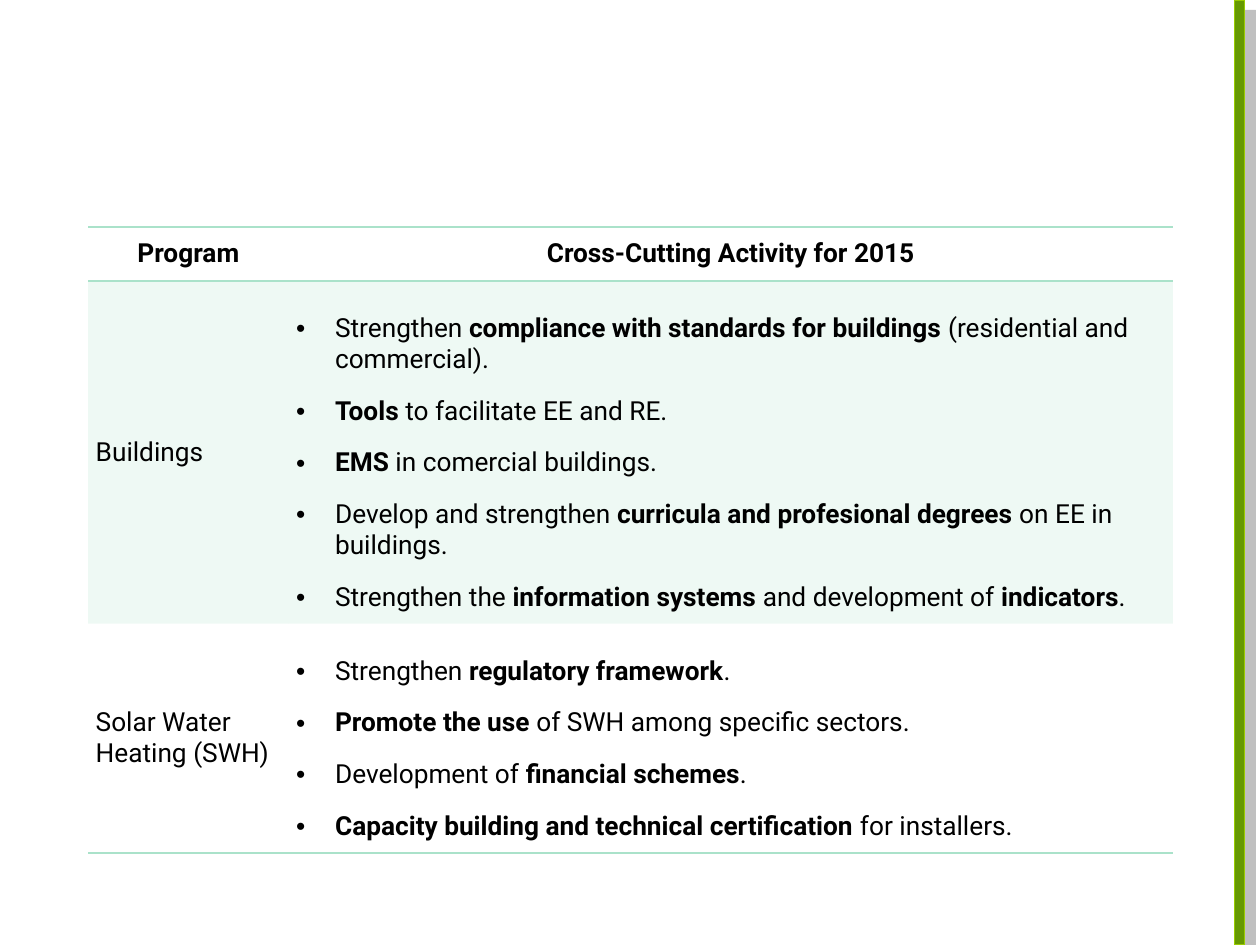
from dataclasses import dataclass
from lxml import etree
from pptx import Presentation
from pptx.dml.color import RGBColor
from pptx.enum import shapes, text
from pptx.oxml import ns
from pptx.util import Inches, Pt


@dataclass(frozen=True)
class Theme:
    font: str = "Roboto"
    size: int = 15
    ink: str = "000000"
    mint: str = "AAE2CA"
    tint: int = 20
    green: str = "669900"
    lime: str = "99CC00"
    shade: str = "808080"


THEME = Theme()
PLAIN = "{2D5ABB26-0587-4C30-8999-92F81FD0307C}"  # table style without grid
HEADS = ["Program", "Cross-Cutting Activity for 2015"]
# Asterisks enclose bold words
ROWS = [
    ("Buildings", 2.72, [
        "Strengthen *compliance with standards for buildings *(residential and commercial).",
        "*Tools* to facilitate EE and RE.",
        "*EMS* in comercial buildings.",
        "Develop and strengthen *curricula and profesional degrees *on EE in buildings.",
        "Strengthen the *information systems* and development of *indicators*.",
    ]),
    ("Solar Water Heating (SWH)", 1.82, [
        "Strengthen *regulatory framework*.",
        "*Promote the use *of SWH among specific sectors.",
        "Development of *financial schemes*.",
        "*Capacity building and technical certification *for installers.",
    ]),
]


def rgb(code):
    return RGBColor.from_string(code)


def add(parent, tag, **attrs):
    node = etree.SubElement(parent, ns.qn(tag))
    for key, val in attrs.items():
        node.set(key, str(val))
    return node


def write(para, words):
    for i, part in enumerate(words.split("*")):
        if part:
            run = para.add_run()
            run.text = part
            run.font.name = THEME.font
            run.font.size = Pt(THEME.size)
            run.font.bold = i % 2 == 1
            run.font.color.rgb = rgb(THEME.ink)


def bullets(cell, items):
    cell.margin_top = Inches(0.2)
    for i, item in enumerate(items):
        para = cell.text_frame.paragraphs[0] if i == 0 else cell.text_frame.add_paragraph()
        para.space_before = Pt(6 if i else 0)
        para.space_after = Pt(6)
        props = para._p.get_or_add_pPr()
        props.set("marL", str(Inches(0.31)))
        props.set("indent", str(Inches(-0.31)))
        add(props, "a:buFont", typeface="Arial")
        add(props, "a:buChar", char="•")
        write(para, item)


def rule(cell, sides):
    props = cell._tc.get_or_add_tcPr()
    for i, side in enumerate(sides):
        line = add(props, "a:ln" + side, w=Pt(1))
        add(add(line, "a:solidFill"), "a:srgbClr", val=THEME.mint)
        props.insert(i, line)


def style(cell, tinted, sides):
    cell.vertical_anchor = text.MSO_ANCHOR.MIDDLE
    cell.margin_left = cell.margin_right = Inches(0.06)
    cell.margin_top = cell.margin_bottom = Inches(0.03)
    if tinted:
        cell.fill.solid()
        cell.fill.fore_color.rgb = rgb(THEME.mint)
        tone = cell._tc.tcPr.find(".//" + ns.qn("a:srgbClr"))
        add(tone, "a:alpha", val=THEME.tint * 1000)
    else:
        cell.fill.background()
    rule(cell, sides)


def plan(slide, left, top, widths, head):
    """Table of programs and their activities."""
    tall = [head] + [row[1] for row in ROWS]
    frame = slide.shapes.add_table(len(tall), len(widths), Inches(left), Inches(top),
                                   Inches(sum(widths)), Inches(sum(tall)))
    table = frame.table
    table.first_row = table.horz_banding = False
    table._tbl.tblPr.find(ns.qn("a:tableStyleId")).text = PLAIN
    for col, wide in zip(table.columns, widths):
        col.width = Inches(wide)
    for row, high in zip(table.rows, tall):
        row.height = Inches(high)

    # Header
    for i, name in enumerate(HEADS):
        cell = table.cell(0, i)
        style(cell, False, "TB")
        para = cell.text_frame.paragraphs[0]
        para.alignment = text.PP_ALIGN.CENTER
        write(para, f"*{name}*")

    # Programs
    for i, (name, _, items) in enumerate(ROWS, 1):
        for j in range(len(widths)):
            style(table.cell(i, j), i % 2 == 1, "B" if i == len(ROWS) else "")
        write(table.cell(i, 0).text_frame.paragraphs[0], name)
        bullets(table.cell(i, 1), items)


def stripe(slide, left, top, width, height):
    """Green edge bar with a hard shadow."""
    bar = slide.shapes.add_shape(shapes.MSO_SHAPE.RECTANGLE, Inches(left), Inches(top),
                                 Inches(width), Inches(height))
    bar.shadow.inherit = False
    bar.fill.solid()
    bar.fill.fore_color.rgb = rgb(THEME.green)
    bar.line.color.rgb = rgb(THEME.lime)
    bar.line.width = Pt(0.75)
    glow = bar._element.spPr.find(ns.qn("a:effectLst"))
    cast = add(glow, "a:outerShdw", blurRad=0, dist=Pt(8.5), dir=45 * 60000,
               algn="ctr", rotWithShape=0)
    add(add(cast, "a:srgbClr", val=THEME.shade), "a:alpha", val=50000)


def main():
    deck = Presentation()
    deck.slide_width, deck.slide_height = Inches(10), Inches(7.5)
    slide = deck.slides.add_slide(deck.slide_layouts[6])
    stripe(slide, 9.8, 0, 0.08, 7.5)
    plan(slide, 0.7, 1.8, [1.59, 7.02], 0.43)
    deck.save("out.pptx")


if __name__ == "__main__":
    main()
